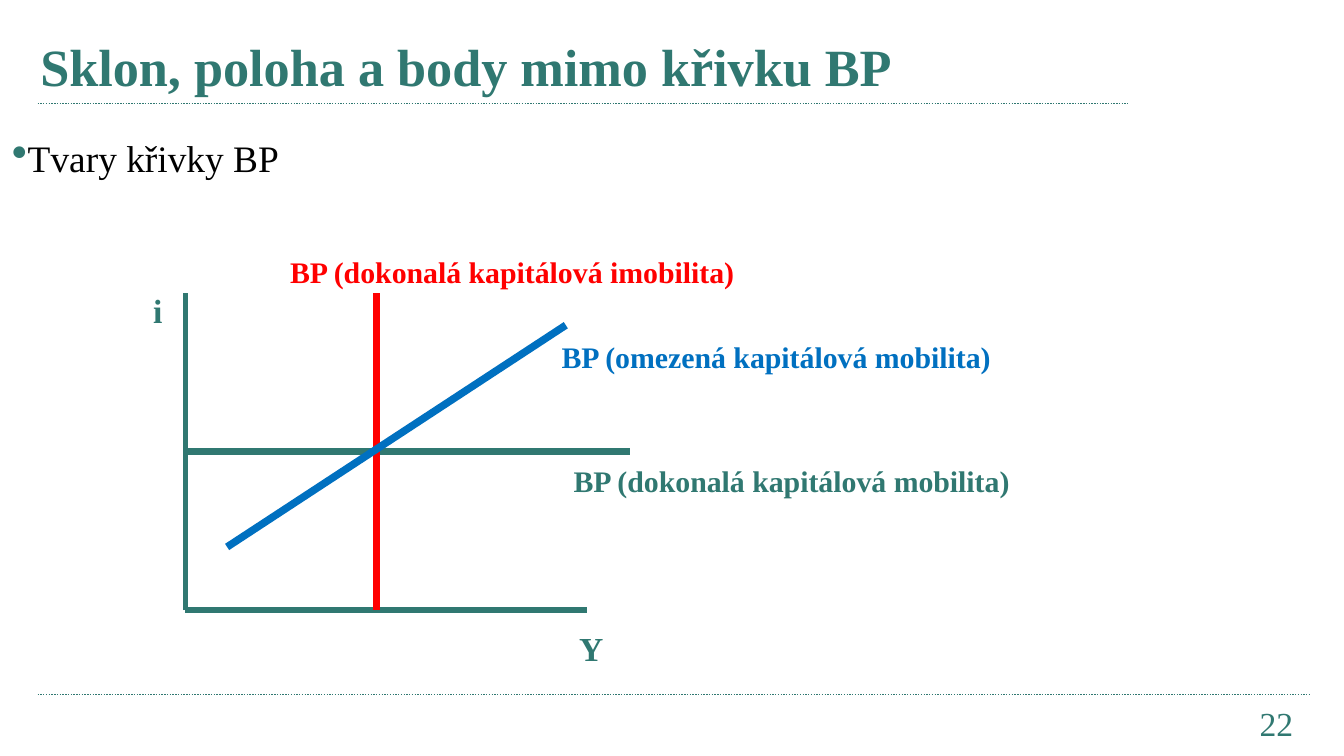
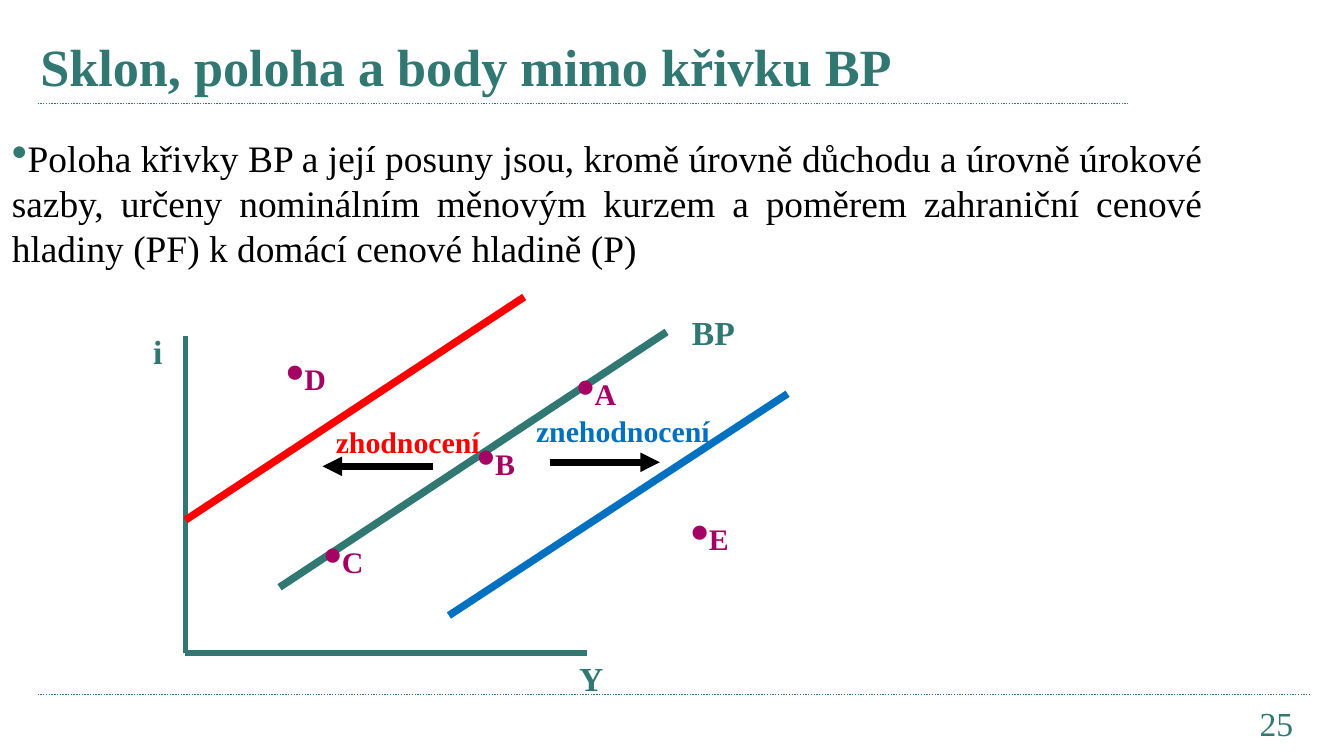
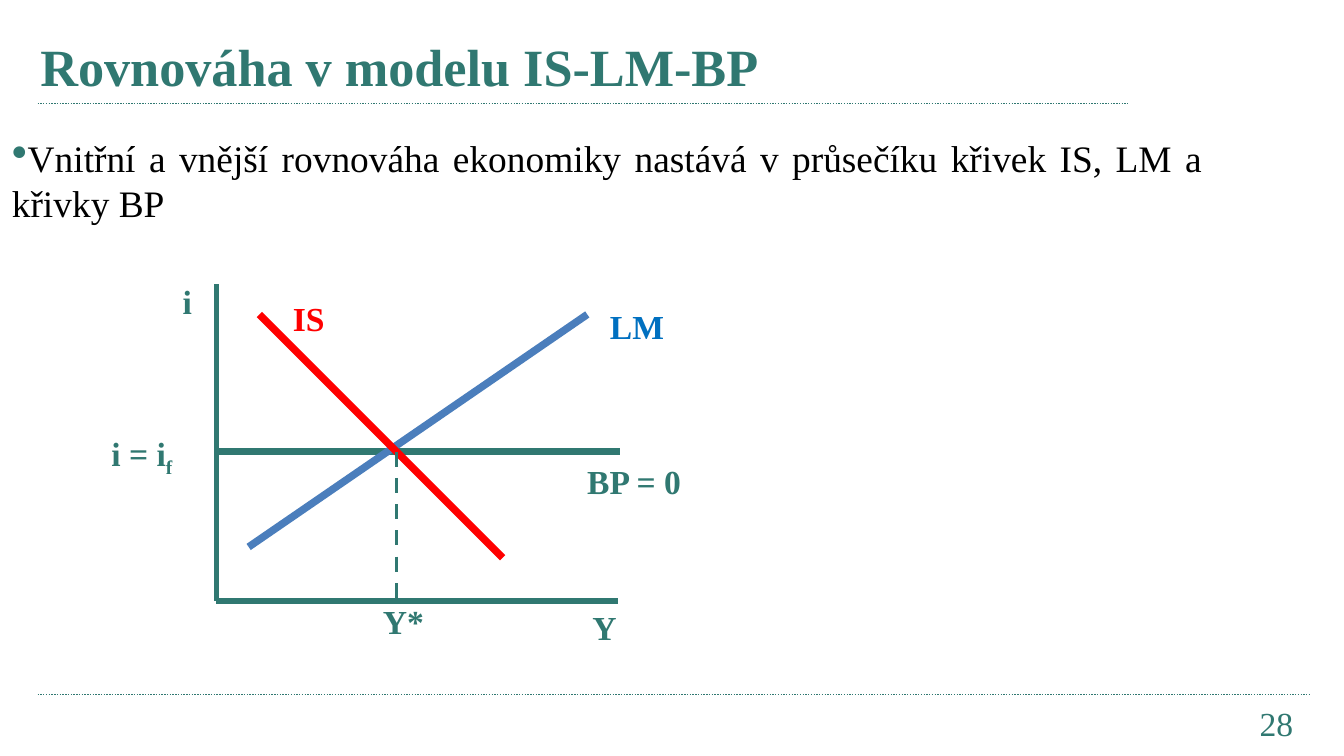
"""Build three slides on the BP curve and the IS-LM-BP model."""

from dataclasses import dataclass

import pptx
import pptx.dml.color
import pptx.enum.dml
import pptx.enum.shapes
import pptx.enum.text
import pptx.oxml.ns
import pptx.presentation
import pptx.slide
import pptx.text.text
import pptx.util
from lxml import etree
from pptx.util import Inches


@dataclass(frozen=True)
class Theme:
    """Colours, typefaces and type sizes shared by the slides."""

    teal: str = "307871"
    red: str = "FF0000"
    blue: str = "0070C0"
    steel: str = "4B7EBC"
    plum: str = "A50363"
    black: str = "000000"
    typeface: str = "Times New Roman"
    title: int = 28
    body: int = 20
    label: int = 18
    note: int = 16
    dot: int = 28
    rule: float = 0.75
    dashed: float = 2
    axis: float = 3
    arrow: float = 3.5
    curve: float = 4


THEME = Theme()
DASH = pptx.enum.dml.MSO_LINE


@dataclass(frozen=True)
class Line:
    """A straight line between two points in inches."""

    start: tuple[float, float]
    end: tuple[float, float]
    color: str = THEME.teal
    weight: float = THEME.curve
    dash: pptx.enum.dml.MSO_LINE | None = None
    arrow: bool = False


@dataclass(frozen=True)
class Label:
    """A bold diagram label, with an optional subscript."""

    text: str
    left: float
    top: float
    width: float = 0.71
    color: str = THEME.teal
    size: int = THEME.label
    subscript: str = ""


@dataclass(frozen=True)
class Point:
    """A dot on the diagram followed by its letter."""

    letter: str
    left: float
    top: float
    width: float


@dataclass(frozen=True)
class Topic:
    """The content of one slide."""

    title: str
    statement: str
    number: int
    origin: tuple[float, float]
    lines: tuple[Line, ...]
    labels: tuple[Label, ...]
    points: tuple[Point, ...] = ()


RULES = (
    Line((0.28, 0.77), (8.39, 0.77), weight=THEME.rule, dash=DASH.ROUND_DOT),
    Line((0.28, 5.17), (9.75, 5.17), weight=THEME.rule, dash=DASH.ROUND_DOT),
)
AXIS_WIDTH, AXIS_HEIGHT = 2.99, 2.36
SLOPE_TITLE = "Sklon, poloha a body mimo křivku BP"

TOPICS = (
    Topic(
        SLOPE_TITLE,
        "Tvary křivky BP",
        22,
        (1.38, 4.54),
        (
            Line((1.38, 3.36), (4.69, 3.36)),
            Line((2.8, 4.54), (2.8, 2.18), THEME.red),
            Line((1.69, 4.07), (4.21, 2.42), THEME.blue),
        ),
        (
            Label("Y", 4.21, 4.62),
            Label("i", 1.04, 2.11),
            Label("BP (dokonalá kapitálová mobilita)", 4.17, 3.39, 4.14, size=THEME.note),
            Label("BP (dokonalá kapitálová imobilita)", 2.06, 1.84, 4.14, THEME.red, THEME.note),
            Label("BP (omezená kapitálová mobilita)", 4.08, 2.47, 4.14, THEME.blue, THEME.note),
        ),
    ),
    Topic(
        SLOPE_TITLE,
        "Poloha křivky BP a její posuny jsou, kromě úrovně důchodu a úrovně úrokové "
        "sazby, určeny nominálním měnovým kurzem a poměrem zahraniční cenové hladiny "
        "(PF) k domácí cenové hladině (P)",
        25,
        (1.38, 4.86),
        (
            Line((2.08, 4.37), (4.96, 2.47)),
            Line((3.34, 4.58), (5.86, 2.93), THEME.blue),
            Line((1.38, 3.87), (3.9, 2.21), THEME.red),
            Line((3.22, 3.47), (2.4, 3.47), THEME.black, THEME.arrow, arrow=True),
            Line((4.09, 3.44), (4.91, 3.44), THEME.black, THEME.arrow, arrow=True),
        ),
        (
            Label("Y", 4.21, 4.85),
            Label("i", 1.04, 2.41),
            Label("zhodnocení", 2.4, 3.1, 1.29, THEME.red, THEME.note),
            Label("znehodnocení", 3.89, 3.02, 1.5, THEME.blue, THEME.note),
            Label("BP", 5.05, 2.27),
        ),
        (
            Point("B", 3.45, 3.1, 0.53),
            Point("A", 4.19, 2.58, 0.86),
            Point("C", 2.31, 3.83, 0.72),
            Point("E", 5.04, 3.66, 0.66),
            Point("D", 2.03, 2.47, 0.73),
        ),
    ),
    Topic(
        "Rovnováha v modelu IS-LM-BP",
        "Vnitřní a vnější rovnováha ekonomiky nastává v průsečíku křivek IS, LM a křivky BP",
        28,
        (1.61, 4.47),
        (
            Line((1.61, 3.36), (4.61, 3.36)),
            Line((1.85, 4.07), (4.37, 2.34), THEME.steel),
            Line((1.93, 2.34), (3.74, 4.15), THEME.red),
            Line((2.95, 3.36), (2.95, 4.47), weight=THEME.dashed, dash=DASH.DASH),
        ),
        (
            Label("BP = 0", 4.27, 3.38, 1.05),
            Label("LM", 4.44, 2.23, color=THEME.blue),
            Label("IS", 2.08, 2.17, color=THEME.red),
            Label("Y", 4.31, 4.47),
            Label("i", 1.26, 2.04),
            Label("i = i", 0.73, 3.17, 0.82, subscript="f"),
            Label("Y*", 2.75, 4.42),
        ),
    ),
)


def format_run(run: pptx.text.text._Run, size: int, color: str, bold: bool = False) -> None:
    """Give a run the shared typeface with its size and colour."""
    run.font.name = THEME.typeface
    run.font.size = pptx.util.Pt(size)
    run.font.bold = bold
    run.font.color.rgb = pptx.dml.color.RGBColor.from_string(color)


def add_text(
    slide: pptx.slide.Slide, left: float, top: float, width: float, height: float, text: str
) -> pptx.text.text.TextFrame:
    """Add a wrapping text box and return its text frame."""
    frame = slide.shapes.add_textbox(
        Inches(left), Inches(top), Inches(width), Inches(height)
    ).text_frame
    frame.word_wrap = True
    frame.text = text
    return frame


def draw_line(slide: pptx.slide.Slide, line: Line) -> None:
    """Draw a line, dashed or with an arrowhead where asked."""
    connector = slide.shapes.add_connector(
        pptx.enum.shapes.MSO_CONNECTOR.STRAIGHT,
        *(Inches(value) for value in line.start + line.end),
    )
    connector.line.color.rgb = pptx.dml.color.RGBColor.from_string(line.color)
    connector.line.width = pptx.util.Pt(line.weight)
    if line.dash is not None:
        connector.line.dash_style = line.dash
    qn = pptx.oxml.ns.qn
    properties = connector.element.spPr
    if line.arrow:
        etree.SubElement(properties.find(qn("a:ln")), qn("a:tailEnd"), type="triangle")
    etree.SubElement(properties, qn("a:effectLst"))


def draw_axes(slide: pptx.slide.Slide, origin: tuple[float, float]) -> None:
    """Draw the vertical and horizontal axes from their origin."""
    x, y = origin
    for end in ((x, y - AXIS_HEIGHT), (x + AXIS_WIDTH, y)):
        draw_line(slide, Line(origin, end, weight=THEME.axis))


def add_label_frame(
    slide: pptx.slide.Slide, place: Label | Point, text: str, size: int
) -> pptx.text.text.TextFrame:
    """Add a one-line frame whose height follows its type size."""
    height = round(size * 1.2 / 72 + 0.1, 2)
    frame = add_text(slide, place.left, place.top, place.width, height, text)
    frame.auto_size = pptx.enum.text.MSO_AUTO_SIZE.SHAPE_TO_FIT_TEXT
    return frame


def draw_label(slide: pptx.slide.Slide, label: Label) -> None:
    """Draw a label and its subscript."""
    paragraph = add_label_frame(slide, label, label.text, label.size).paragraphs[0]
    format_run(paragraph.runs[0], label.size, label.color, bold=True)
    if label.subscript:
        subscript = paragraph.add_run()
        subscript.text = label.subscript
        format_run(subscript, label.size, label.color, bold=True)
        subscript.font._element.set("baseline", "-25000")


def draw_point(slide: pptx.slide.Slide, point: Point) -> None:
    """Draw a dot with its letter."""
    paragraph = add_label_frame(slide, point, "•", THEME.dot).paragraphs[0]
    format_run(paragraph.runs[0], THEME.dot, THEME.plum, bold=True)
    letter = paragraph.add_run()
    letter.text = point.letter
    format_run(letter, THEME.note, THEME.plum, bold=True)


def set_title(slide: pptx.slide.Slide, text: str) -> None:
    """Place and format the title placeholder."""
    title = slide.shapes.title
    title.left, title.top = Inches(0.2), Inches(0.21)
    title.width, title.height = Inches(8.11), Inches(0.56)
    frame = title.text_frame
    frame.text = text
    frame.auto_size = pptx.enum.text.MSO_AUTO_SIZE.NONE
    frame.vertical_anchor = pptx.enum.text.MSO_ANCHOR.MIDDLE
    frame.paragraphs[0].alignment = pptx.enum.text.PP_ALIGN.LEFT
    format_run(frame.paragraphs[0].runs[0], THEME.title, THEME.teal, bold=True)


def add_statement(slide: pptx.slide.Slide, text: str) -> None:
    """Add the justified bulleted statement."""
    paragraph = add_text(slide, -0.01, 0.96, 9.06, 4.64, text).paragraphs[0]
    paragraph.alignment = pptx.enum.text.PP_ALIGN.JUSTIFY
    paragraph.space_after = pptx.util.Pt(12)
    qn = pptx.oxml.ns.qn
    properties = paragraph._p.get_or_add_pPr()
    properties.set("marL", "0")
    properties.set("indent", "0")
    bullet_color = etree.SubElement(properties, qn("a:buClr"))
    etree.SubElement(bullet_color, qn("a:srgbClr"), val=THEME.teal)
    etree.SubElement(properties, qn("a:buSzPct"), val="120000")
    etree.SubElement(properties, qn("a:buChar"), char="•")
    format_run(paragraph.runs[0], THEME.body, THEME.black)


def add_number(slide: pptx.slide.Slide, number: int) -> None:
    """Add the page number below the lower rule."""
    frame = add_text(slide, 8.54, 5.17, 1.18, 0.3, str(number))
    frame.margin_top = Inches(0.06)
    frame.paragraphs[0].alignment = pptx.enum.text.PP_ALIGN.RIGHT
    format_run(frame.paragraphs[0].runs[0], THEME.label, THEME.teal)


def build_slide(deck: pptx.presentation.Presentation, topic: Topic) -> None:
    """Build one slide with its frame, statement and diagram."""
    slide = deck.slides.add_slide(deck.slide_layouts.get_by_name("Title Only"))
    set_title(slide, topic.title)
    for rule in RULES:
        draw_line(slide, rule)
    add_statement(slide, topic.statement)
    add_number(slide, topic.number)
    draw_axes(slide, topic.origin)
    for line in topic.lines:
        draw_line(slide, line)
    for label in topic.labels:
        draw_label(slide, label)
    for point in topic.points:
        draw_point(slide, point)


def main() -> None:
    """Build and save the deck."""
    deck = pptx.Presentation()
    deck.slide_width = Inches(10)
    deck.slide_height = deck.slide_width * 9 // 16
    for topic in TOPICS:
        build_slide(deck, topic)
    deck.save("out.pptx")


if __name__ == "__main__":
    main()
